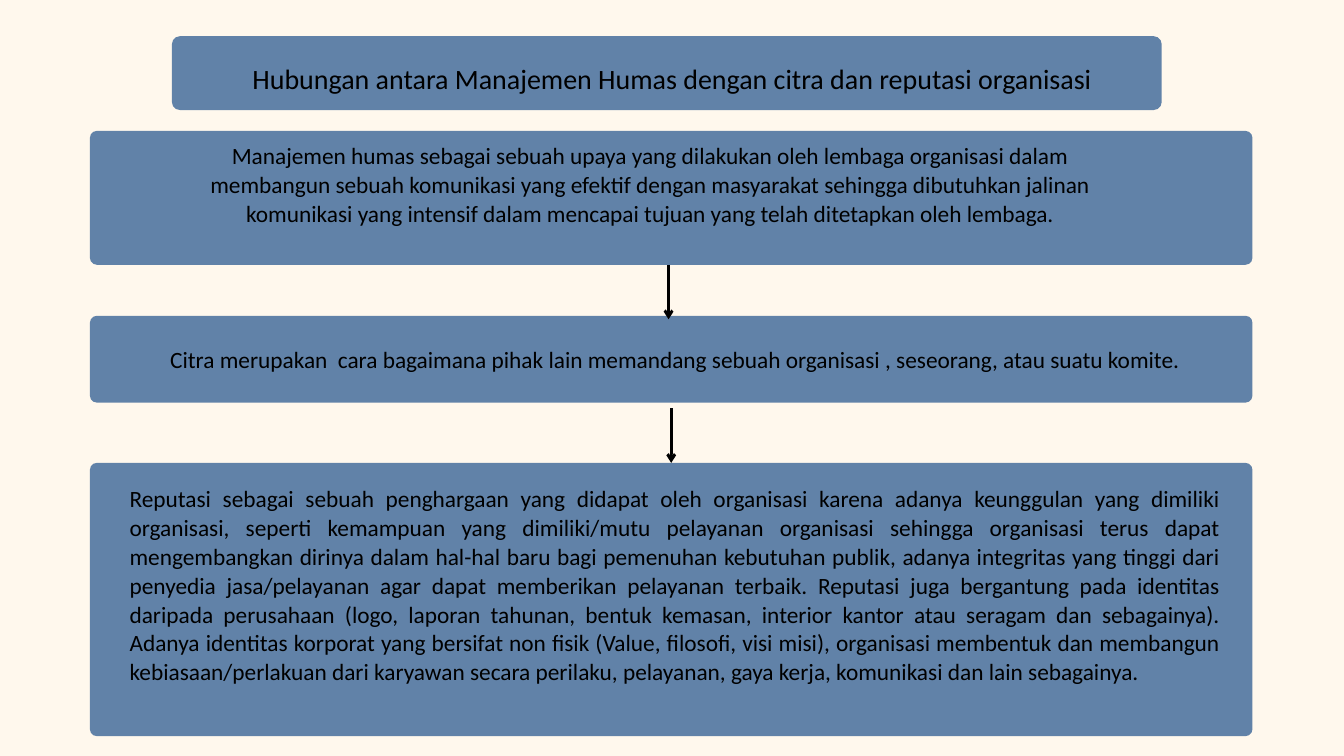
"""Build a slide on how public relations management shapes image and reputation."""
from lxml import etree
from pptx import Presentation
from pptx.dml.color import RGBColor
from pptx.enum.shapes import MSO_CONNECTOR, MSO_SHAPE
from pptx.enum.text import MSO_ANCHOR, MSO_AUTO_SIZE, PP_ALIGN
from pptx.oxml.ns import qn
from pptx.util import Cm, Pt

CENTER, JUSTIFY = PP_ALIGN.CENTER, PP_ALIGN.JUSTIFY
TOP, NO_FIT = MSO_ANCHOR.TOP, MSO_AUTO_SIZE.NONE
ROUNDED, STRAIGHT = MSO_SHAPE.ROUNDED_RECTANGLE, MSO_CONNECTOR.STRAIGHT
TITLE_ONLY = 5

TITLE = "Hubungan antara Manajemen Humas dengan citra dan reputasi organisasi"
MANAJEMEN = (
    "Manajemen humas sebagai sebuah upaya yang dilakukan oleh lembaga organisasi "
    "dalam membangun sebuah komunikasi yang efektif dengan masyarakat sehingga "
    "dibutuhkan jalinan komunikasi yang intensif dalam mencapai tujuan yang telah "
    "ditetapkan oleh lembaga."
)
CITRA = (
    "Citra merupakan  cara bagaimana pihak lain memandang sebuah organisasi , "
    "seseorang, atau suatu komite."
)
REPUTASI = (
    "Reputasi sebagai sebuah penghargaan yang didapat oleh organisasi karena adanya "
    "keunggulan yang dimiliki organisasi, seperti kemampuan yang dimiliki/mutu "
    "pelayanan organisasi sehingga organisasi terus dapat mengembangkan dirinya dalam "
    "hal-hal baru bagi pemenuhan kebutuhan publik, adanya integritas yang tinggi dari "
    "penyedia jasa/pelayanan agar dapat memberikan pelayanan terbaik. Reputasi juga "
    "bergantung pada identitas daripada perusahaan (logo, laporan tahunan, bentuk "
    "kemasan, interior kantor atau seragam dan sebagainya). Adanya identitas korporat "
    "yang bersifat non fisik (Value, filosofi, visi misi), organisasi membentuk dan "
    "membangun kebiasaan/perlakuan dari karyawan secara perilaku, pelayanan, gaya "
    "kerja, komunikasi dan lain sebagainya."
)


def color(value):
    return RGBColor.from_string(value)


class SlideBuilder:
    font = "Calibri"
    ink, card_fill, background = "000000", "6182A8", "FFF8ED"

    def __init__(self, slide):
        self.s = slide
        fill = slide.background.fill
        fill.solid()
        fill.fore_color.rgb = color(self.background)

    def card(self, x, y, w, h, radius=0.26):
        sp = self.s.shapes.add_shape(ROUNDED, Cm(x), Cm(y), Cm(w), Cm(h))
        sp.adjustments[0] = radius / min(w, h)
        sp.shadow.inherit = False
        sp.fill.solid()
        sp.fill.fore_color.rgb = color(self.card_fill)
        sp.line.fill.background()

    def set_text(self, sp, text, size, leading, align):
        tf = sp.text_frame
        tf.word_wrap = True
        tf.auto_size = NO_FIT
        tf.vertical_anchor = TOP
        tf.margin_left = tf.margin_top = tf.margin_right = tf.margin_bottom = 0
        p = tf.paragraphs[0]
        p.alignment = align
        p.line_spacing = Pt(leading)
        p.space_before = Pt(0)
        r = p.add_run()
        r.text = text
        r.font.name = self.font
        r.font.size = Pt(size)
        r.font.color.rgb = color(self.ink)

    def title(self, text, x, y, w, h):
        sp = self.s.shapes.title
        sp.left, sp.top, sp.width, sp.height = Cm(x), Cm(y), Cm(w), Cm(h)
        sp.element.getparent().append(sp.element)
        self.set_text(sp, text, 30, 37.2, CENTER)

    def text(self, text, x, y, w, h, align=CENTER):
        sp = self.s.shapes.add_textbox(Cm(x), Cm(y), Cm(w), Cm(h))
        self.set_text(sp, text, 25, 31, align)

    def arrow(self, x, y, length=2.06):
        sp = self.s.shapes.add_connector(STRAIGHT, Cm(x), Cm(y), Cm(x), Cm(y + length))
        sp.line.color.rgb = color(self.ink)
        sp.line.width = Pt(3)
        props = sp.element.spPr
        etree.SubElement(props.find(qn("a:ln")), qn("a:tailEnd"), type="arrow")
        etree.SubElement(props, qn("a:effectLst"))


def main():
    prs = Presentation()
    prs.slide_width, prs.slide_height = Cm(50.8), Cm(28.58)
    b = SlideBuilder(prs.slides.add_slide(prs.slide_layouts[TITLE_ONLY]))

    b.card(6.5, 1.37, 37.41, 2.79, radius=0.3)
    for y, h in ((4.95, 5.06), (11.94, 3.28), (17.5, 10.33)):
        b.card(3.4, y, 43.94, h)

    b.title(TITLE, 7.75, 2.29, 35.31, 1.3)
    b.text(MANAJEMEN, 6.5, 5.31, 36.12, 4.32)
    b.text(CITRA, 4.14, 13.03, 42.72, 1.07)
    b.text(REPUTASI, 4.9, 18.26, 41.2, 8.66, JUSTIFY)

    b.arrow(25.27, 10.01)
    b.arrow(25.37, 15.44)
    prs.save("out.pptx")


if __name__ == "__main__":
    main()
